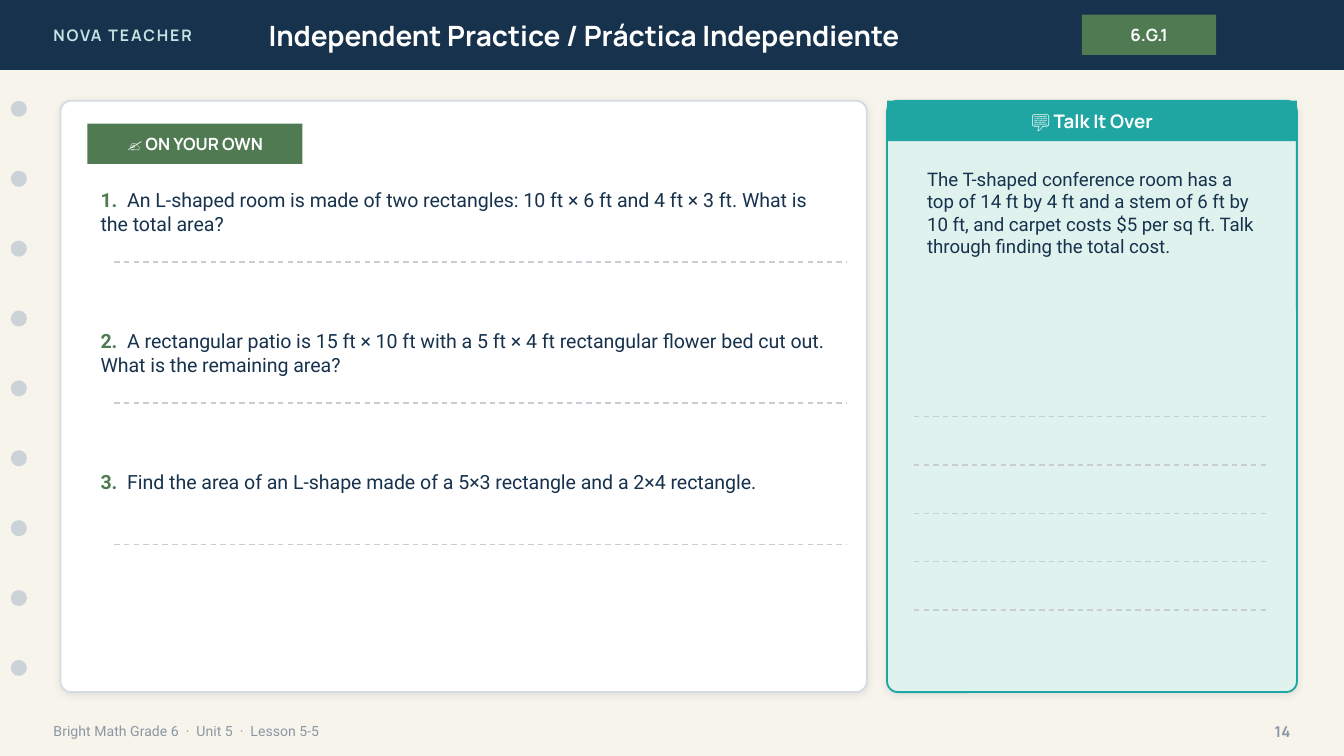
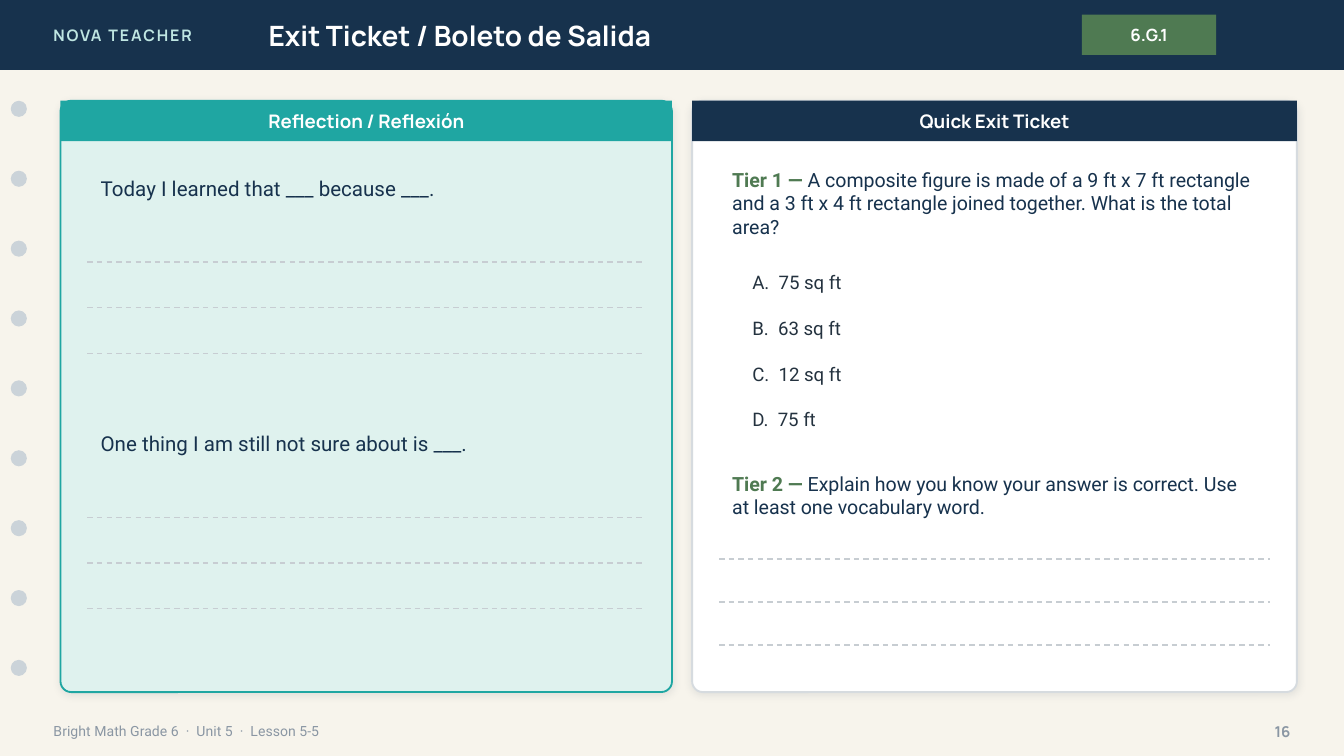
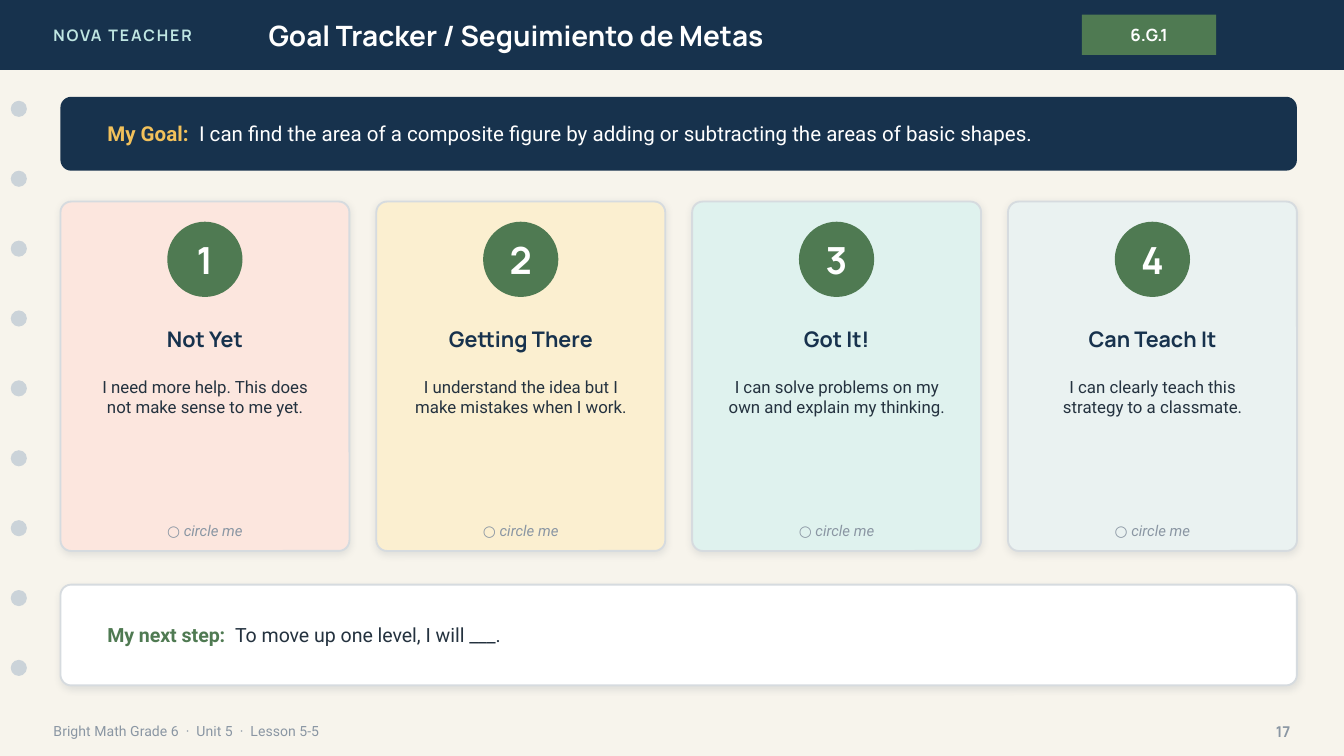
from lxml.etree import SubElement
from pptx import Presentation
from pptx.dml.color import RGBColor
from pptx.enum.dml import MSO_LINE
from pptx.enum.shapes import MSO_CONNECTOR, MSO_SHAPE as SHAPE
from pptx.enum.text import MSO_ANCHOR as ANCHOR, PP_ALIGN as ALIGN
from pptx.oxml.ns import qn
from pptx.util import Inches, Pt

COLORS = {
    "navy": "17324D", "green": "4F7A52", "teal": "1FA6A2", "mint": "DFF2EE",
    "aqua": "BFE6E2", "gold": "F2C15B", "cream": "F7F4EC", "white": "FFFFFF",
    "ink": "24323F", "muted": "8A96A3", "hole": "CBD3D9", "edge": "D6DBDF",
    "rule": "C7CDD2", "shade": "1C2E42", "blush": "FCE6DE", "butter": "FBEFD0",
    "mist": "EAF2F1",
}
RGB = {name: RGBColor.from_string(value) for name, value in COLORS.items()}
HEAD, BODY = "Manrope", "Roboto"
CELL = Inches(0.1)
COLUMNS, ROWS = 100, 56.25
CORNER = 0.8
LEFT, RIGHT, TOP = 4.5, 96.5, 7.5
PANEL_HEIGHT, BAND_HEIGHT, PADDING = 44, 3, 2


def block(slide, box, runs=(), size=10, font=BODY, align=ALIGN.LEFT, anchor=ANCHOR.MIDDLE,
          kind=None, fill=None, border=None, bold=False, italic=False, spacing=None):
    place = [round(CELL * cells) for cells in box]
    if kind is None:
        shape = slide.shapes.add_textbox(*place)
    else:
        shape = slide.shapes.add_shape(kind, *place)
        shape.fill.solid()
        shape.fill.fore_color.rgb = RGB[fill]
        if kind == SHAPE.ROUNDED_RECTANGLE:
            shape.adjustments[0] = CORNER / min(box[2:])
        shape.shadow.inherit = False
        if border:
            shape.line.color.rgb = RGB[border]
            shape.line.width = Pt(1)
            effects = shape._element.spPr.find(qn("a:effectLst"))
            shadow = SubElement(effects, qn("a:outerShdw"), blurRad=str(Pt(4)), dist=str(Pt(1)),
                                dir="5400000", algn="bl", rotWithShape="0")
            tint = SubElement(shadow, qn("a:srgbClr"), val=COLORS["shade"])
            SubElement(tint, qn("a:alpha"), val="10000")
        else:
            shape.line.fill.background()
    if not runs:
        return
    frame = shape.text_frame
    frame.word_wrap = True
    frame.vertical_anchor = anchor
    paragraph = frame.paragraphs[0]
    paragraph.alignment = align
    paragraph.font.name = font
    paragraph.font.size = Pt(size)
    paragraph.font.italic = italic
    if len(runs) == 1:
        paragraph.font.bold = bold
        paragraph.font.color.rgb = RGB[runs[0][1]]
    for position, (words, color) in enumerate(runs):
        run = paragraph.add_run()
        run.text = words
        if len(runs) > 1:
            run.font.bold = position == 0
            run.font.color.rgb = RGB[color]
        if spacing:
            run._r.get_or_add_rPr().set("spc", str(spacing))


def writing_lines(slide, left, right, top, count=1, gap=0):
    for number in range(count):
        y = round(CELL * (top + number * gap))
        rule = slide.shapes.add_connector(MSO_CONNECTOR.STRAIGHT, round(CELL * left), y,
                                          round(CELL * right), y)
        rule.line.color.rgb = RGB["rule"]
        rule.line.width = Pt(0.75)
        rule.line.dash_style = MSO_LINE.DASH
        SubElement(rule._element.spPr, qn("a:effectLst"))


deck = Presentation()
deck.slide_width = CELL * COLUMNS
deck.slide_height = round(CELL * ROWS)

lessons = []
for title, page in [
    ("Independent Practice / Práctica Independiente", "14"),
    ("Exit Ticket / Boleto de Salida", "16"),
    ("Goal Tracker / Seguimiento de Metas", "17"),
]:
    slide = deck.slides.add_slide(deck.slide_layouts[6])
    slide.background.fill.solid()
    slide.background.fill.fore_color.rgb = RGB["cream"]
    block(slide, (0, 0, COLUMNS, 5.2), kind=SHAPE.RECTANGLE, fill="navy")
    block(slide, (3, 0, 24, 5.2), [("NOVA TEACHER", "aqua")], 8.5, HEAD, bold=True, spacing=100)
    block(slide, (19, 0, 56, 5.2), [(title, "white")], 15, HEAD, bold=True)
    block(slide, (80.5, 1.1, 10, 3), [("6.G.1", "white")], 9, HEAD, ALIGN.CENTER,
          kind=SHAPE.RECTANGLE, fill="green", bold=True)
    for hole in range(9):
        block(slide, (0.8, TOP + hole * 5.2, 1.2, 1.2), kind=SHAPE.OVAL, fill="hole")
    block(slide, (3, 53, 70, 2.8), [("Bright Math Grade 6  ·  Unit 5  ·  Lesson 5-5", "muted")], 7.5)
    block(slide, (92, 53, 5, 2.8), [(page, "muted")], 8, HEAD, ALIGN.RIGHT, bold=True)
    lessons.append(slide)
practice, ticket, tracker = lessons

for slide, left, width, fill, border, heading, band in [
    (practice, LEFT, 60, "white", "edge", None, None),
    (practice, 66, 30.5, "mint", "teal", "💬 Talk It Over", "teal"),
    (ticket, LEFT, 45.5, "mint", "teal", "Reflection / Reflexión", "teal"),
    (ticket, 51.5, 45, "white", "edge", "Quick Exit Ticket", "navy"),
]:
    block(slide, (left, TOP, width, PANEL_HEIGHT), kind=SHAPE.ROUNDED_RECTANGLE,
          fill=fill, border=border)
    if heading:
        block(slide, (left, TOP, width, BAND_HEIGHT), [(heading, "white")], 10, HEAD, ALIGN.CENTER,
              kind=SHAPE.RECTANGLE, fill=band, bold=True)

inner = LEFT + PADDING
block(practice, (inner, 9.2, 16, 3), [("✍️ ON YOUR OWN", "white")], 9, HEAD, ALIGN.CENTER,
      kind=SHAPE.RECTANGLE, fill="green", bold=True)
for number, problem in enumerate([
    "An L-shaped room is made of two rectangles: 10 ft × 6 ft and 4 ft × 3 ft. What is the total area?",
    "A rectangular patio is 15 ft × 10 ft with a 5 ft × 4 ft rectangular flower bed cut out. "
    "What is the remaining area?",
    "Find the area of an L-shape made of a 5×3 rectangle and a 2×4 rectangle.",
]):
    top = 13.5 + number * 10.5
    block(practice, (inner, top, 56.5, 5), [(f"{number + 1}.  ", "green"), (problem, "navy")],
          10.5, anchor=ANCHOR.TOP)
    writing_lines(practice, inner + 2, 63, top + 6)
block(practice, (68, 12, 27, 17), [(
    "The T-shaped conference room has a top of 14 ft by 4 ft and a stem of 6 ft by 10 ft, "
    "and carpet costs $5 per sq ft. Talk through finding the total cost.", "navy")],
    anchor=ANCHOR.TOP)
writing_lines(practice, 68, 94.5, 31, 5, 3.6)

for top, starter in [
    (12, "Today I learned that ___ because ___."),
    (31, "One thing I am still not sure about is ___."),
]:
    block(ticket, (inner, top, 41.5, 4), [(starter, "navy")], 11)
    writing_lines(ticket, inner, 48, top + 7.5, 3, 3.4)
for top, height, tier, question in [
    (12, 7, "Tier 1 — ", "A composite figure is made of a 9 ft x 7 ft rectangle and a 3 ft x 4 ft "
                         "rectangle joined together. What is the total area?"),
    (34.6, 5.5, "Tier 2 — ", "Explain how you know your answer is correct. "
                             "Use at least one vocabulary word."),
]:
    block(ticket, (53.5, top, 41, height), [(tier, "green"), (question, "navy")], 10.5,
          anchor=ANCHOR.TOP)
for row, choice in enumerate(["A.  75 sq ft", "B.  63 sq ft", "C.  12 sq ft", "D.  75 ft"]):
    block(ticket, (55, 19.5 + row * 3.4, 39, 3), [(choice, "ink")])
writing_lines(ticket, 53.5, 94.5, 41.6, 3, 3.2)

full = RIGHT - LEFT
block(tracker, (LEFT, 7.2, full, 5.5), kind=SHAPE.ROUNDED_RECTANGLE, fill="navy")
block(tracker, (7, 7.2, 87, 5.5), [
    ("My Goal:  ", "gold"),
    ("I can find the area of a composite figure by adding or subtracting the areas of basic shapes.",
     "white")], 11)

level_gap, badge = 2, 5.6
level_width = (full - 3 * level_gap) / 4
for number, (level, meaning, fill) in enumerate([
    ("Not Yet", "I need more help. This does not make sense to me yet.", "blush"),
    ("Getting There", "I understand the idea but I make mistakes when I work.", "butter"),
    ("Got It!", "I can solve problems on my own and explain my thinking.", "mint"),
    ("Can Teach It", "I can clearly teach this strategy to a classmate.", "mist"),
]):
    left = LEFT + number * (level_width + level_gap)
    circle = (left + (level_width - badge) / 2, 16.5, badge, badge)
    block(tracker, (left, 15, level_width, 26), kind=SHAPE.ROUNDED_RECTANGLE, fill=fill, border="edge")
    block(tracker, circle, kind=SHAPE.OVAL, fill="green")
    block(tracker, circle, [(str(number + 1), "white")], 20, HEAD, ALIGN.CENTER, bold=True)
    block(tracker, (left + 0.5, 23.5, level_width - 1, 3.5), [(level, "navy")], 11.5, HEAD,
          ALIGN.CENTER, bold=True)
    block(tracker, (left + 1.2, 27.5, level_width - 2.4, 11.5), [(meaning, "ink")], 9,
          align=ALIGN.CENTER, anchor=ANCHOR.TOP)
    block(tracker, (left + 0.5, 38.5, level_width - 1, 2), [("○ circle me", "muted")], 8,
          align=ALIGN.CENTER, italic=True)

block(tracker, (LEFT, 43.5, full, 7.5), kind=SHAPE.ROUNDED_RECTANGLE, fill="white", border="edge")
block(tracker, (7, 43.5, 87, 7.5), [
    ("My next step:  ", "green"), ("To move up one level, I will ___.", "ink")], 10.5)

deck.save("out.pptx")
